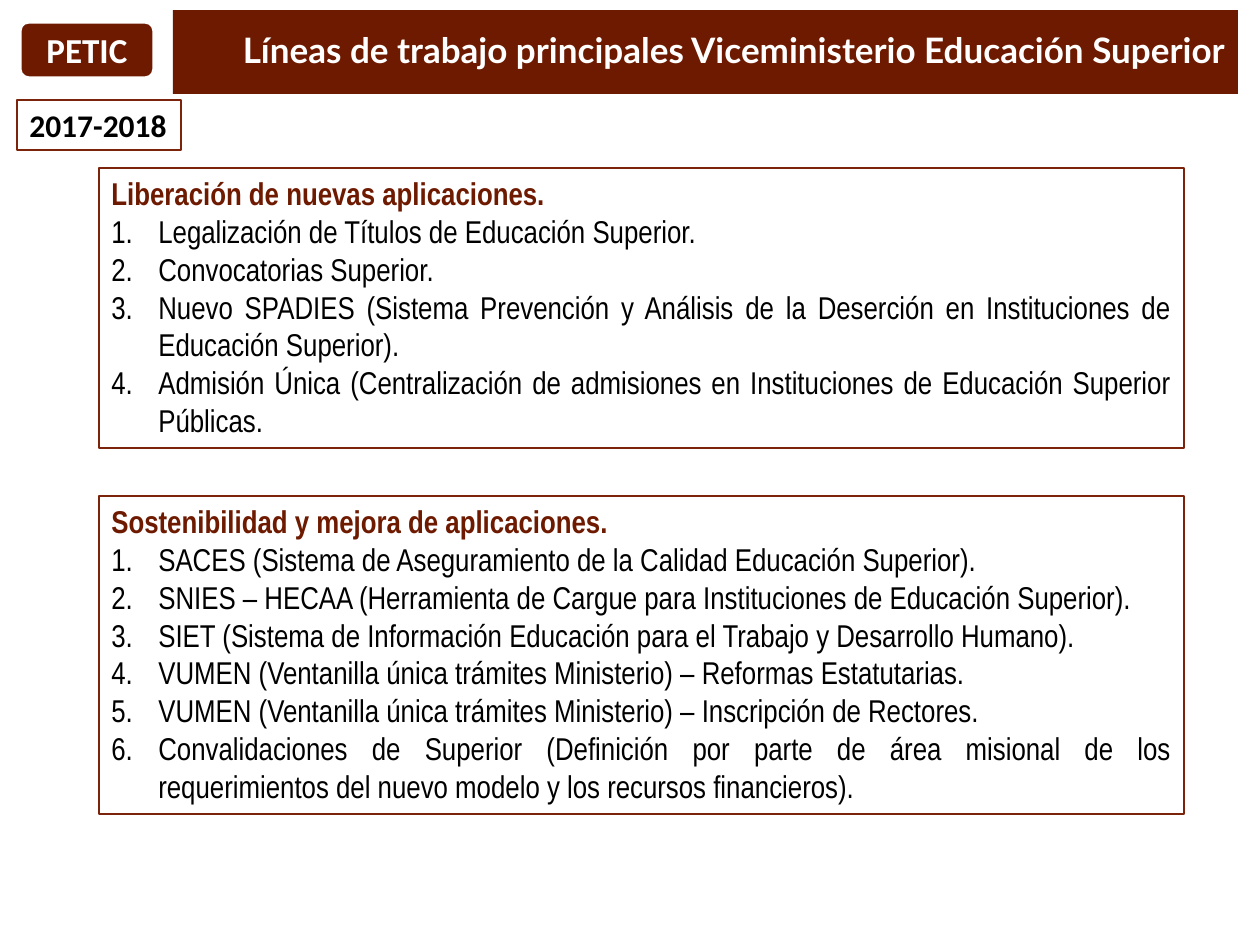
from lxml import etree
from pptx import Presentation
from pptx import util as u
from pptx.dml.color import RGBColor
from pptx.enum import shapes, text
from pptx.oxml.ns import qn

COLORS = {"brown": "6E1A00", "border": "7C240B", "white": "FFFFFF", "black": "000000"}
SCALE = 914400 / 126
INDENT = 47

GROUPS = [
    (168, 280, "Liberación de nuevas aplicaciones.", [
        "Legalización de Títulos de Educación Superior.",
        "Convocatorias Superior.",
        "Nuevo SPADIES (Sistema Prevención y Análisis de la Deserción en "
        "Instituciones de Educación Superior).",
        "Admisión Única (Centralización de admisiones en Instituciones de "
        "Educación Superior Públicas.",
    ]),
    (496, 318, "Sostenibilidad y mejora de aplicaciones.", [
        "SACES (Sistema de Aseguramiento de la Calidad Educación Superior).",
        "SNIES – HECAA (Herramienta de Cargue para Instituciones de Educación Superior).",
        "SIET (Sistema de Información Educación para el Trabajo y Desarrollo Humano).",
        "VUMEN (Ventanilla única trámites Ministerio) – Reformas Estatutarias.",
        "VUMEN (Ventanilla única trámites Ministerio) – Inscripción de Rectores.",
        "Convalidaciones de Superior (Definición por parte de área misional de los "
        "requerimientos del nuevo modelo y los recursos financieros).",
    ]),
]


def px(n):
    return u.Emu(round(n * SCALE))


def rgb(name):
    return RGBColor.from_string(COLORS[name])


class Deck:
    def __init__(self):
        self.prs = Presentation()
        self.prs.slide_width, self.prs.slide_height = px(1260), px(945)
        self.s = self.prs.slides.add_slide(self.prs.slide_layouts[6])

    def box(self, rect, kind="RECTANGLE", fill=None, line=None, width=0.75, **frame):
        sp = self.s.shapes.add_shape(shapes.MSO_SHAPE[kind], *map(px, rect))
        sp.shadow.inherit = False
        if fill:
            sp.fill.solid()
            sp.fill.fore_color.rgb = rgb(fill)
        else:
            sp.fill.background()
        if line:
            sp.line.color.rgb = rgb(line)
            sp.line.width = u.Pt(width)
        else:
            sp.line.fill.background()
        tf = sp.text_frame
        for key, value in {"word_wrap": True, **frame}.items():
            setattr(tf, key, value)
        return tf

    def add_text(self, p, words, color, align, **font):
        p.alignment = text.PP_ALIGN[align]
        r = p.add_run()
        r.text = words
        for key, value in font.items():
            setattr(r.font, key, value)
        r.font.color.rgb = rgb(color)

    def label(self, rect, words, color, align, name, size, spacing=None, **style):
        tf = self.box(rect, **style)
        p = tf.paragraphs[0]
        p.line_spacing = spacing
        self.add_text(p, words, color, align, name=name, size=u.Pt(size), bold=True)

    def numbered(self, rect, heading, items):
        tf = self.box(rect, line="border", vertical_anchor=text.MSO_ANCHOR.TOP,
                      auto_size=text.MSO_AUTO_SIZE.SHAPE_TO_FIT_TEXT)
        font = {"name": "Arial Narrow", "size": u.Pt(18)}
        self.add_text(tf.paragraphs[0], heading, "brown", "JUSTIFY", bold=True, **font)
        for item in items:
            p = tf.add_paragraph()
            pPr = p._p.get_or_add_pPr()
            pPr.set("marL", str(px(INDENT)))
            pPr.set("indent", str(-px(INDENT)))
            etree.SubElement(pPr, qn("a:buAutoNum"), type="arabicPeriod")
            self.add_text(p, item, "black", "JUSTIFY", bold=False, **font)


def main():
    d = Deck()
    middle = text.MSO_ANCHOR.MIDDLE
    d.label((19, 21, 136, 58), "PETIC", "white", "CENTER", "Calibri", 20,
            kind="ROUNDED_RECTANGLE", fill="brown", line="white", width=3,
            vertical_anchor=middle)
    d.label((173, 10, 1065, 84),
            "Líneas de trabajo principales Viceministerio Educación Superior",
            "white", "RIGHT", "Lato", 20, spacing=0.9, fill="brown",
            vertical_anchor=middle)
    d.label((17, 100, 164, 50), "2017-2018", "black", "LEFT", "Calibri", 18,
            line="border", word_wrap=False, vertical_anchor=text.MSO_ANCHOR.TOP,
            auto_size=text.MSO_AUTO_SIZE.SHAPE_TO_FIT_TEXT)
    for top, height, heading, items in GROUPS:
        d.numbered((99, top, 1085, height), heading, items)
    d.prs.save("out.pptx")


if __name__ == "__main__":
    main()
